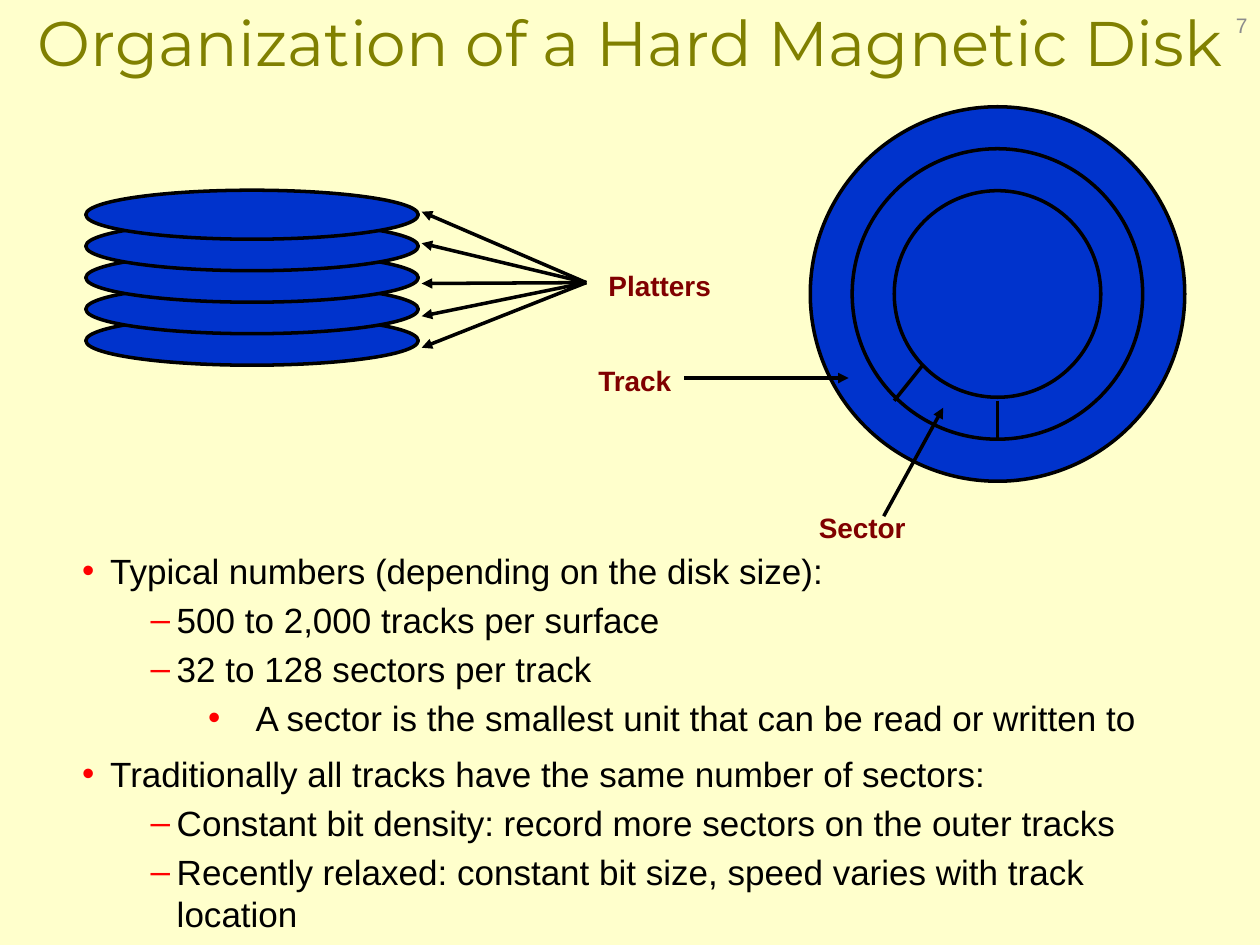
"""Build the slide on the organization of a hard magnetic disk."""
from dataclasses import dataclass

from lxml import etree
from pptx import Presentation
from pptx import util as u
from pptx.dml import color
from pptx.enum import shapes, text
from pptx.oxml import ns


@dataclass(frozen=True)
class Theme:
    background: str = "FFFFCC"
    title: str = "808000"
    body: str = "000000"
    bullet: str = "FF0000"
    label: str = "800000"
    disk: str = "0033CC"
    outline: str = "000000"
    number: str = "8C8C8C"
    title_font: str = "Montserrat"
    body_font: str = "Arial"
    title_size: int = 36
    body_size: int = 20
    label_size: int = 16
    number_size: int = 12
    line_width: int = 2


THEME = Theme()
BULLET_STYLES = [("•", 16, -16), ("–", 54, -15), ("•", 99, -27)]
POINTS = [
    (0, 4, "Typical numbers (depending on the disk size):"),
    (1, 4, "500 to 2,000 tracks per surface"),
    (1, 4, "32 to 128 sectors per track"),
    (2, 4, "A sector is the smallest unit that can be read or written to"),
    (0, 8, "Traditionally all tracks have the same number of sectors:"),
    (1, 4, "Constant bit density: record more sectors on the outer tracks"),
    (1, 4, "Recently relaxed: constant bit size, speed varies with track location"),
]


def points(*values):
    """Convert numbers to point lengths."""
    return [u.Pt(value) for value in values]


def rgb(value):
    """Return a colour from its hex code."""
    return color.RGBColor.from_string(value)


def add_run(paragraph, words, size, hue, font=THEME.body_font, bold=False):
    """Add one formatted run to a paragraph."""
    run = paragraph.add_run()
    run.text = words
    run.font.name = font
    run.font.size = u.Pt(size)
    run.font.bold = bold
    run.font.color.rgb = rgb(hue)


def set_frame(shape, horizontal, vertical, wrap=True, anchor=text.MSO_ANCHOR.TOP):
    """Set margins, wrapping and anchor, and return the text frame."""
    frame = shape.text_frame
    frame.margin_left = frame.margin_right = u.Pt(horizontal)
    frame.margin_top = frame.margin_bottom = u.Pt(vertical)
    frame.word_wrap = wrap
    frame.vertical_anchor = anchor
    frame.auto_size = text.MSO_AUTO_SIZE.NONE
    return frame


def add_title(slide, words):
    """Place and format the title placeholder."""
    title = slide.shapes.title
    title.left, title.top, title.width, title.height = points(0, 0, 720, 47.5)
    paragraph = set_frame(title, 5, 2).paragraphs[0]
    paragraph.alignment = text.PP_ALIGN.CENTER
    add_run(paragraph, words, THEME.title_size, THEME.title, THEME.title_font)


def add_bullet(paragraph, level, space_before):
    """Give a paragraph its indent, spacing and coloured bullet."""
    character, margin, indent = BULLET_STYLES[level]
    paragraph.level = level
    paragraph.space_before = u.Pt(space_before)
    properties = paragraph._p.get_or_add_pPr()
    properties.set("marL", str(u.Pt(margin)))
    properties.set("indent", str(u.Pt(indent)))
    bullet_color = etree.SubElement(properties, ns.qn("a:buClr"))
    etree.SubElement(bullet_color, ns.qn("a:srgbClr"), val=THEME.bullet)
    etree.SubElement(properties, ns.qn("a:buFont"), typeface=THEME.body_font)
    etree.SubElement(properties, ns.qn("a:buChar"), char=character)


def add_body(slide):
    """Add the bulleted list."""
    frame = set_frame(slide.shapes.add_textbox(*points(42, 312, 624, 229.5)), 5, 2)
    for index, (level, space_before, words) in enumerate(POINTS):
        paragraph = frame.add_paragraph() if index else frame.paragraphs[0]
        add_bullet(paragraph, level, space_before)
        add_run(paragraph, words, THEME.body_size, THEME.body)


def add_ellipse(group, left, top, width, height, filled=True):
    """Add an outlined ellipse, filled or open."""
    shape = group.add_shape(shapes.MSO_SHAPE.OVAL, *points(left, top, width, height))
    shape.shadow.inherit = False
    if filled:
        shape.fill.solid()
        shape.fill.fore_color.rgb = rgb(THEME.disk)
    else:
        shape.fill.background()
    shape.line.color.rgb = rgb(THEME.outline)
    shape.line.width = u.Pt(THEME.line_width)


def add_line(group, start, end, arrow=None):
    """Add a straight line with an optional headEnd or tailEnd arrow."""
    line = group.add_connector(shapes.MSO_CONNECTOR.STRAIGHT, *points(*start, *end))
    line.line.color.rgb = rgb(THEME.outline)
    line.line.width = u.Pt(THEME.line_width)
    properties = line._element.spPr
    if arrow:
        outline = properties.find(ns.qn("a:ln"))
        etree.SubElement(outline, ns.qn(f"a:{arrow}"), type="triangle")
    etree.SubElement(properties, ns.qn("a:effectLst"))


def add_label(group, words, left, top, width):
    """Add a bold label that does not wrap."""
    box = group.add_textbox(*points(left, top, width, 26))
    frame = set_frame(box, 7.2, 3.6, wrap=False)
    frame.auto_size = text.MSO_AUTO_SIZE.SHAPE_TO_FIT_TEXT
    add_run(frame.paragraphs[0], words, THEME.label_size, THEME.label, bold=True)


def add_platters(group):
    """Draw the stack of platters with its arrows and label."""
    for step in reversed(range(5)):
        add_ellipse(group, 49, 108.7 + 18 * step, 190, 28)
    for tip in (121, 139, 162, 180.7, 198.7):
        add_line(group, (241, tip), (335, 161.5), "headEnd")
    add_label(group, "Platters", 340.6, 150, 73)


def add_surface(group):
    """Draw the platter surface with its track and sector marked."""
    center_x, center_y = 570, 168
    for radius, filled in ((107, True), (83, False), (59, False)):
        add_ellipse(group, center_x - radius, center_y - radius,
                    2 * radius, 2 * radius, filled)
    add_line(group, (391, 216), (485, 216), "tailEnd")
    add_label(group, "Track", 334.8, 204, 57)
    add_line(group, (570, 229), (570, 251))
    add_line(group, (511, 229), (527, 209))
    add_line(group, (505, 295), (539, 233), "tailEnd")
    add_label(group, "Sector", 460.8, 288, 64)


def add_number(slide, number):
    """Add the page number in the top right corner."""
    box = slide.shapes.add_textbox(*points(552, 0, 168, 29))
    frame = set_frame(box, 7.2, 3.6, anchor=text.MSO_ANCHOR.MIDDLE)
    frame.paragraphs[0].alignment = text.PP_ALIGN.RIGHT
    add_run(frame.paragraphs[0], number, THEME.number_size, THEME.number)


def main():
    """Build and save the presentation."""
    presentation = Presentation()
    presentation.slide_width, presentation.slide_height = points(720, 540)
    slide = presentation.slides.add_slide(presentation.slide_layouts.get_by_name("Title Only"))
    slide.background.fill.solid()
    slide.background.fill.fore_color.rgb = rgb(THEME.background)
    add_title(slide, "Organization of a Hard Magnetic Disk")
    add_body(slide)
    add_platters(slide.shapes.add_group_shape().shapes)
    add_surface(slide.shapes.add_group_shape().shapes)
    add_number(slide, "7")
    presentation.save("out.pptx")


if __name__ == "__main__":
    main()
